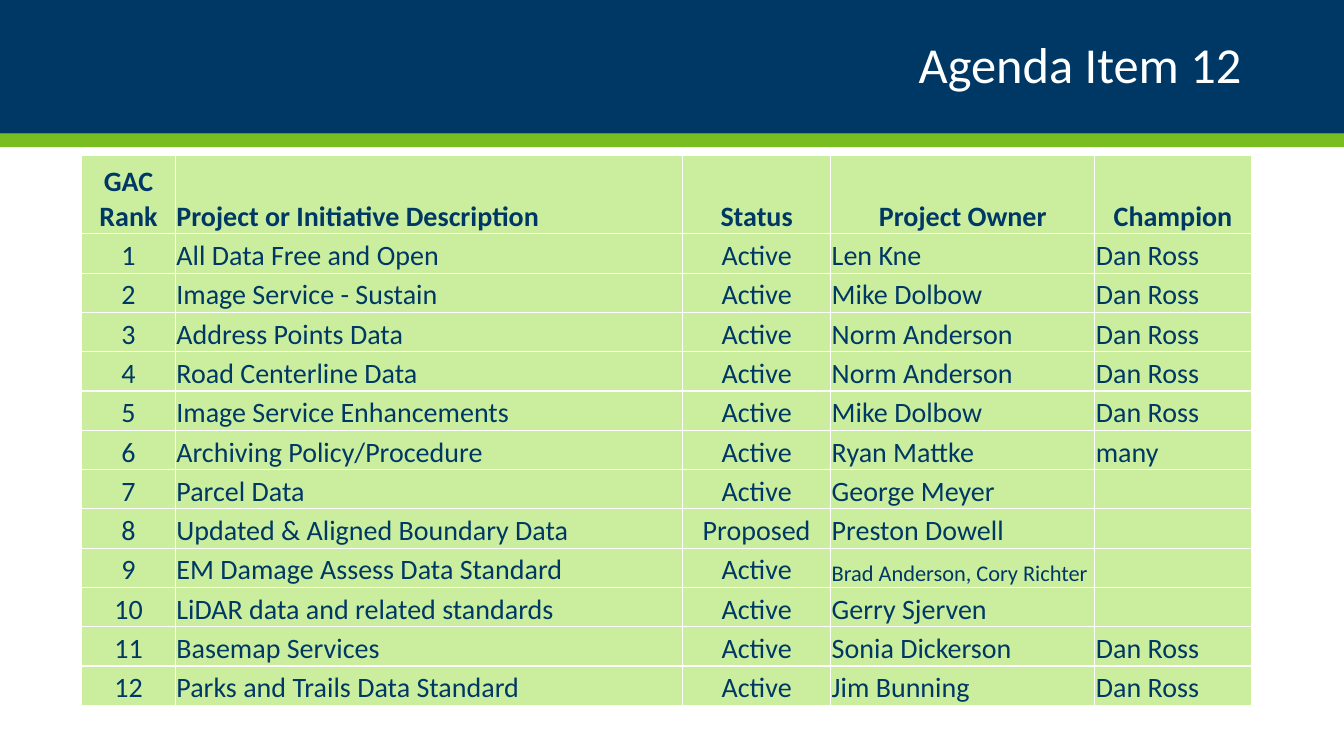
from dataclasses import dataclass

from lxml.etree import SubElement
from pptx import Presentation
from pptx.dml.color import RGBColor as Rgb
from pptx.enum.shapes import MSO_SHAPE as Shape
from pptx.enum.text import MSO_ANCHOR as Anchor, PP_ALIGN as Align
from pptx.oxml.ns import qn
from pptx.util import Inches, Pt


@dataclass(frozen=True)
class Theme:
    font: str = "Calibri"
    navy: str = "003865"
    green: str = "78BE21"
    pale_green: str = "CAEE9D"
    white: str = "FFFFFF"
    title_size: int = 36
    body_size: int = 20
    small_size: int = 16
    rule_width: int = 1


THEME = Theme()
SLIDE_W, SLIDE_H = 13.33, 7.5
COLUMN_WIDTHS = [0.93, 5.03, 1.47, 2.62, 1.55]
COLUMN_ALIGNS = [Align.CENTER, Align.LEFT, Align.CENTER, Align.LEFT, Align.LEFT]
HEADER_ALIGNS = [Align.CENTER, Align.LEFT] + [Align.CENTER] * 3
HEADINGS = ["GAC Rank", "Project or Initiative Description", "Status", "Project Owner", "Champion"]
PROJECTS = [
    ("All Data Free and Open", "Active", "Len Kne", "Dan Ross"),
    ("Image Service - Sustain", "Active", "Mike Dolbow", "Dan Ross"),
    ("Address Points Data", "Active", "Norm Anderson", "Dan Ross"),
    ("Road Centerline Data", "Active", "Norm Anderson", "Dan Ross"),
    ("Image Service Enhancements", "Active", "Mike Dolbow", "Dan Ross"),
    ("Archiving Policy/Procedure", "Active", "Ryan Mattke", "many"),
    ("Parcel Data", "Active", "George Meyer", ""),
    ("Updated & Aligned Boundary Data", "Proposed", "Preston Dowell", ""),
    ("EM Damage Assess Data Standard", "Active", "Brad Anderson, Cory Richter", ""),
    ("LiDAR data and related standards", "Active", "Gerry Sjerven", ""),
    ("Basemap Services", "Active", "Sonia Dickerson", "Dan Ross"),
    ("Parks and Trails Data Standard", "Active", "Jim Bunning", "Dan Ross"),
]
SHARED_OWNER = "Brad Anderson, Cory Richter"


def write(frame, text, size=THEME.body_size, color=THEME.navy, bold=False,
          align=Align.LEFT, spacing=None):
    frame.word_wrap = True
    paragraph = frame.paragraphs[0]
    paragraph.alignment = align
    paragraph.line_spacing = spacing
    run = paragraph.add_run()
    run.text = text
    run.font.name = THEME.font
    run.font.size = Pt(size)
    run.font.bold = bold
    run.font.color.rgb = Rgb.from_string(color)


def add_band(slide, left, top, width, height, color):
    band = slide.shapes.add_shape(
        Shape.RECTANGLE, Inches(left), Inches(top), Inches(width), Inches(height))
    band.shadow.inherit = False
    band.fill.solid()
    band.fill.fore_color.rgb = Rgb.from_string(color)
    band.line.fill.background()


def add_header(slide, left, top, width, height):
    stripe = height / 11
    navy_height = height - stripe
    add_band(slide, left, top, width, navy_height, THEME.navy)
    add_band(slide, left, top + navy_height, width, stripe, THEME.green)
    margin = width * 0.0688
    title = slide.shapes.add_textbox(
        Inches(left + margin), Inches(top + navy_height / 8),
        Inches(width - 2 * margin), Inches(navy_height * 0.75)).text_frame
    title.vertical_anchor = Anchor.MIDDLE
    write(title, "Agenda Item 12", size=THEME.title_size, color=THEME.white,
          align=Align.RIGHT, spacing=0.9)


def style_cell(cell):
    cell.vertical_anchor = Anchor.BOTTOM
    cell.margin_left = cell.margin_right = cell.margin_top = Inches(0.01)
    cell.margin_bottom = 0
    properties = cell._tc.get_or_add_tcPr()
    for side in ("a:lnL", "a:lnR", "a:lnT", "a:lnB"):
        border = SubElement(properties, qn(side), w=str(Pt(THEME.rule_width)))
        fill = SubElement(border, qn("a:solidFill"))
        SubElement(fill, qn("a:srgbClr"), val=THEME.white)
    cell.fill.solid()
    cell.fill.fore_color.rgb = Rgb.from_string(THEME.pale_green)


def add_projects(slide, left, top, width, height):
    rows = [HEADINGS] + [(str(rank), *project) for rank, project in enumerate(PROJECTS, 1)]
    table = slide.shapes.add_table(
        len(rows), len(HEADINGS), Inches(left), Inches(top), Inches(width), Inches(height)).table
    unit = height / (len(rows) + 1)
    for column, share in zip(table.columns, COLUMN_WIDTHS):
        column.width = Inches(width * share / sum(COLUMN_WIDTHS))
    for r, texts in enumerate(rows):
        is_header = r == 0
        table.rows[r].height = Inches(unit * (2 if is_header else 1))
        aligns = HEADER_ALIGNS if is_header else COLUMN_ALIGNS
        for c, (text, align) in enumerate(zip(texts, aligns)):
            cell = table.cell(r, c)
            style_cell(cell)
            if text:
                size = THEME.small_size if text == SHARED_OWNER else THEME.body_size
                write(cell.text_frame, text, size=size, bold=is_header, align=align)


def main():
    deck = Presentation()
    deck.slide_width, deck.slide_height = Inches(SLIDE_W), Inches(SLIDE_H)
    slide = deck.slides.add_slide(deck.slide_layouts[6])
    add_header(slide, 0, 0, SLIDE_W, 1.46)
    add_projects(slide, 0.81, 1.54, sum(COLUMN_WIDTHS), 5.46)
    deck.save("out.pptx")


if __name__ == "__main__":
    main()
